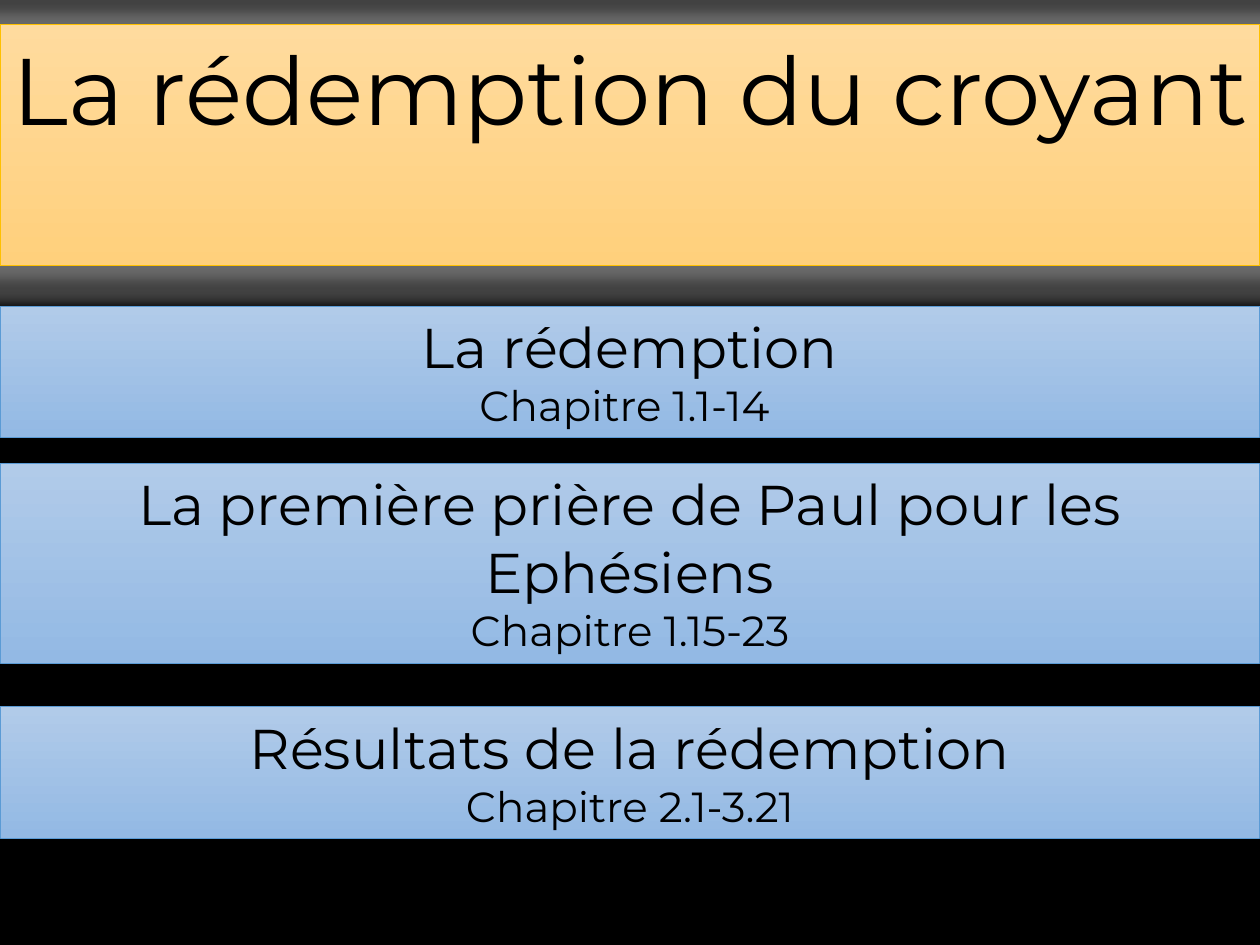
from lxml import etree
from pptx import Presentation
from pptx.dml.color import RGBColor
from pptx.enum import shapes, text
from pptx.oxml import ns
from pptx.util import Pt

WIDTH, HEIGHT = 720, 540
GOLD = ("FFDB9E", "FFD07C", "FFC000")
BLUE = ("B1CBE9", "93B9E4", "5B9BD5")
CHAPTERS = [
    (175, 75, "La rédemption", "Chapitre 1.1-14 "),
    (265, 114, "La première prière de Paul pour les Ephésiens", "Chapitre 1.15-23"),
    (404, 75, "Résultats de la rédemption", "Chapitre 2.1-3.21"),
]


def color(value):
    """Turn a hex string into a colour."""
    return RGBColor.from_string(value)


def write(para, words, size, font="Montserrat", ink="000000"):
    """Put a formatted, centred span of text in a paragraph."""
    para.alignment = text.PP_ALIGN.CENTER
    span = para.add_run()
    span.text = words
    span.font.size = Pt(size)
    span.font.name = font
    span.font.color.rgb = color(ink)


def add_band(page, top, height, palette):
    """Draw a full-width band shaded from top to bottom."""
    band = page.shapes.add_shape(
        shapes.MSO_SHAPE.RECTANGLE, Pt(0), Pt(top), Pt(WIDTH), Pt(height))
    band.shadow.inherit = False
    band.fill.gradient()
    band.fill.gradient_angle = 270
    for stop, position, shade in zip(band.fill.gradient_stops, (0, 1), palette):
        stop.position = position
        stop.color.rgb = color(shade)
    band.line.color.rgb = color(palette[-1])
    band.line.width = Pt(0.5)
    frame = band.text_frame
    frame.word_wrap = True
    frame.vertical_anchor = text.MSO_ANCHOR.TOP
    return band


def add_glow(band, radius, shade, opacity):
    """Surround a band with a soft glow."""
    effects = band._element.spPr.find(ns.qn("a:effectLst"))
    glow = etree.SubElement(effects, ns.qn("a:glow"), rad=str(Pt(radius)))
    tint = etree.SubElement(glow, ns.qn("a:srgbClr"), val=shade)
    etree.SubElement(tint, ns.qn("a:alpha"), val=str(opacity * 1000))


def add_title(page, top, height, words):
    """Draw the glowing title band."""
    band = add_band(page, top, height, GOLD)
    add_glow(band, 14, "A5A5A5", 40)
    write(band.text_frame.paragraphs[0], words, 54)


def add_chapter(page, top, height, heading, verses):
    """Draw a chapter band with its heading and verses."""
    frame = add_band(page, top, height, BLUE).text_frame
    write(frame.paragraphs[0], heading, 32)
    write(frame.add_paragraph(), verses, 24)


def main():
    """Build and save the deck."""
    deck = Presentation()
    deck.slide_width, deck.slide_height = Pt(WIDTH), Pt(HEIGHT)
    page = deck.slides.add_slide(deck.slide_layouts[6])
    page.background.fill.solid()
    page.background.fill.fore_color.rgb = color("000000")
    add_title(page, 14, 138, "La rédemption du croyant")
    for chapter in CHAPTERS:
        add_chapter(page, *chapter)
    deck.save("out.pptx")


if __name__ == "__main__":
    main()
